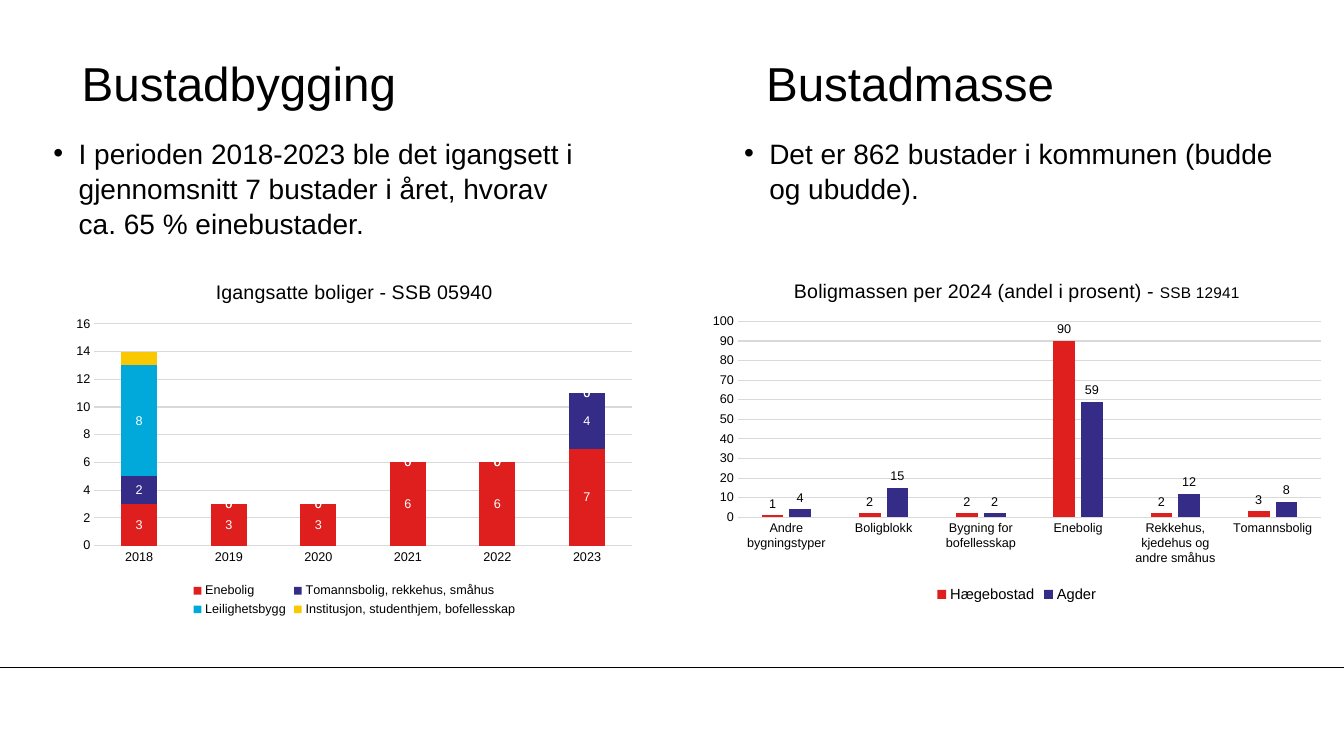
from dataclasses import dataclass

import pptx
import pptx.chart.data
import pptx.dml.color
import pptx.enum.chart
import pptx.enum.shapes
import pptx.enum.text
import pptx.oxml
import pptx.oxml.ns
import pptx.util
from lxml import etree

FONT = "Arial"
COLORS = {
    "text": "000000",
    "label": "FFFFFF",
    "grid": "D9D9D9",
    "red": "DF1F1D",
    "indigo": "342C86",
    "cyan": "00A9DA",
    "yellow": "FAC800",
}
SLIDE_WIDTH = pptx.util.Inches(13.33)
SLIDE_HEIGHT = pptx.util.Inches(7.5)
CHART_TYPES = pptx.enum.chart.XL_CHART_TYPE


@dataclass(frozen=True)
class Area:
    left: float
    top: float
    width: float
    height: float

    def emu(self) -> tuple[int, int, int, int]:
        return (
            int(SLIDE_WIDTH * self.left / 100),
            int(SLIDE_HEIGHT * self.top / 100),
            int(SLIDE_WIDTH * self.width / 100),
            int(SLIDE_HEIGHT * self.height / 100),
        )


@dataclass(frozen=True)
class Series:
    name: str
    values: tuple[int, ...]
    color: str
    labelled_points: tuple[int, ...] | None = None


@dataclass(frozen=True)
class ColumnChart:
    area: Area
    plot_share: Area
    kind: CHART_TYPES
    title_runs: tuple[tuple[str, float], ...]
    categories: tuple[str, ...]
    series: tuple[Series, ...]
    gap: int
    overlap: int
    maximum: int
    step: int
    legend_size: float
    label_color: str


@dataclass(frozen=True)
class Column:
    heading: str
    heading_area: Area
    bullet_lines: tuple[str, ...]
    bullet_area: Area
    chart: ColumnChart


COLUMNS = (
    Column(
        "Bustadbygging",
        Area(6.08, 5.87, 37.2, 10),
        ("I perioden 2018-2023 ble det igangsett i gjennomsnitt 7 bustader i året, hvorav",
         "ca. 65 % einebustader."),
        Area(3.98, 17.87, 47.64, 14.13),
        ColumnChart(
            Area(4.88, 34.8, 42.99, 47.33),
            Area(0.05, 0.17, 0.93, 0.62),
            CHART_TYPES.COLUMN_STACKED,
            (("Igangsatte boliger - SSB 05940", 14),),
            ("2018", "2019", "2020", "2021", "2022", "2023"),
            (
                Series("Enebolig", (3, 3, 3, 6, 6, 7), "red"),
                Series("Tomannsbolig, rekkehus, småhus", (2, 0, 0, 0, 0, 4), "indigo"),
                Series("Leilighetsbygg", (8, 0, 0, 0, 0, 0), "cyan"),
                Series("Institusjon, studenthjem, bofellesskap", (1, 0, 0, 0, 0, 0), "yellow", (4, 5)),
            ),
            150, 100, 16, 2, 9, "label",
        ),
    ),
    Column(
        "Bustadmasse",
        Area(57, 5.87, 37.2, 10),
        ("Det er 862 bustader i kommunen (budde og ubudde).",),
        Area(55.36, 17.87, 39.68, 11.2),
        ColumnChart(
            Area(52.06, 34.8, 47.19, 45.47),
            Area(0.06, 0.17, 0.92, 0.57),
            CHART_TYPES.COLUMN_CLUSTERED,
            (("Boligmassen per 2024 (andel i prosent) - ", 14), ("SSB 12941", 11)),
            ("Andre bygningstyper", "Boligblokk", "Bygning for bofellesskap", "Enebolig",
             "Rekkehus, kjedehus og andre småhus", "Tomannsbolig"),
            (
                Series("Hægebostad", (1, 2, 2, 90, 2, 3), "red"),
                Series("Agder", (4, 15, 2, 59, 12, 8), "indigo"),
            ),
            219, -27, 100, 10, 10.5, "text",
        ),
    ),
)


def rgb(name: str) -> pptx.dml.color.RGBColor:
    return pptx.dml.color.RGBColor.from_string(COLORS[name])


def style_font(font, size: float, color: str = "text") -> None:
    font.name = FONT
    font.size = pptx.util.Pt(size)
    font.bold = False
    font.color.rgb = rgb(color)


def prepare_frame(shape, area: Area, anchor):
    shape.left, shape.top, shape.width, shape.height = area.emu()
    frame = shape.text_frame
    frame.word_wrap = True
    frame.auto_size = pptx.enum.text.MSO_AUTO_SIZE.NONE
    frame.vertical_anchor = anchor
    frame.margin_left = frame.margin_top = frame.margin_right = frame.margin_bottom = 0
    paragraph = frame.paragraphs[0]
    paragraph.alignment = pptx.enum.text.PP_ALIGN.LEFT
    return paragraph


def add_run(paragraph, text: str, size: float) -> None:
    run = paragraph.add_run()
    run.text = text
    style_font(run.font, size)


def write_heading(shape, column: Column) -> None:
    paragraph = prepare_frame(shape, column.heading_area, pptx.enum.text.MSO_ANCHOR.MIDDLE)
    add_run(paragraph, column.heading, 34)


def add_bullet(slide, column: Column) -> None:
    shape = slide.shapes.add_textbox(*column.bullet_area.emu())
    paragraph = prepare_frame(shape, column.bullet_area, pptx.enum.text.MSO_ANCHOR.TOP)
    paragraph.line_spacing = 1.04
    properties = paragraph._p.get_or_add_pPr()
    indent = pptx.util.Inches(0.25)
    properties.set("marL", str(indent))
    properties.set("indent", str(-indent))
    etree.SubElement(properties, pptx.oxml.ns.qn("a:buFont"), typeface=FONT)
    etree.SubElement(properties, pptx.oxml.ns.qn("a:buChar"), char="•")
    for index, line in enumerate(column.bullet_lines):
        if index:
            paragraph.add_line_break()
        add_run(paragraph, line, 20)


def place_plot(chart, share: Area) -> None:
    plot_area = chart.element.find(".//" + pptx.oxml.ns.qn("c:plotArea"))
    for layout in plot_area.findall(pptx.oxml.ns.qn("c:layout")):
        plot_area.remove(layout)
    layout = etree.Element(pptx.oxml.ns.qn("c:layout"))
    manual = etree.SubElement(layout, pptx.oxml.ns.qn("c:manualLayout"))
    settings = (("layoutTarget", "inner"), ("xMode", "edge"), ("yMode", "edge"),
                ("x", share.left), ("y", share.top), ("w", share.width), ("h", share.height))
    for name, value in settings:
        etree.SubElement(manual, pptx.oxml.ns.qn(f"c:{name}"), val=str(value))
    plot_area.insert(0, layout)


def style_axes(chart, design: ColumnChart) -> None:
    for axis in (chart.category_axis, chart.value_axis):
        axis.major_tick_mark = axis.minor_tick_mark = pptx.enum.chart.XL_TICK_MARK.NONE
        style_font(axis.tick_labels.font, 9)
    values = chart.value_axis
    values.minimum_scale, values.maximum_scale = 0, design.maximum
    values.major_unit = design.step
    values.format.line.fill.background()
    for line in (chart.category_axis.format.line, values.major_gridlines.format.line):
        line.color.rgb = rgb("grid")
        line.width = pptx.util.Pt(0.75)


def style_series(plotted, series: Series, label_color: str) -> None:
    plotted.format.fill.solid()
    plotted.format.fill.fore_color.rgb = rgb(series.color)
    plotted.invert_if_negative = False
    labels = plotted.data_labels
    labels.show_value = series.labelled_points is None
    style_font(labels.font, 9, label_color)
    for index in series.labelled_points or ():
        style_font(plotted.points[index].data_label.font, 9, label_color)


def add_column_chart(slide, design: ColumnChart) -> None:
    data = pptx.chart.data.CategoryChartData()
    data.categories = design.categories
    for series in design.series:
        data.add_series(series.name, series.values)
    chart = slide.shapes.add_chart(design.kind, *design.area.emu(), data).chart
    style_font(chart.font, 10)
    chart.has_title = True
    for text, size in design.title_runs:
        add_run(chart.chart_title.text_frame.paragraphs[0], text, size)
    chart.has_legend = True
    chart.legend.position = pptx.enum.chart.XL_LEGEND_POSITION.BOTTOM
    chart.legend.include_in_layout = False
    style_font(chart.legend.font, design.legend_size)
    plot = chart.plots[0]
    plot.vary_by_categories = False
    plot.gap_width, plot.overlap = design.gap, design.overlap
    style_axes(chart, design)
    for plotted, series in zip(plot.series, design.series):
        style_series(plotted, series, design.label_color)
    place_plot(chart, design.plot_share)


def add_footer_line(slide) -> None:
    left, top, width, _ = Area(0, 88.27, 100, 0).emu()
    line = slide.shapes.add_connector(pptx.enum.shapes.MSO_CONNECTOR.STRAIGHT, left, top, width, top)
    line.line.color.rgb = rgb("text")
    line.line.width = pptx.util.Pt(0.75)
    etree.SubElement(line._element.spPr, pptx.oxml.ns.qn("a:effectLst"))


def main() -> None:
    presentation = pptx.Presentation()
    presentation.slide_width, presentation.slide_height = SLIDE_WIDTH, SLIDE_HEIGHT
    slide = presentation.slides.add_slide(presentation.slide_layouts[5])
    add_footer_line(slide)
    building, stock = COLUMNS
    write_heading(slide.shapes.title, building)
    write_heading(slide.shapes.add_textbox(*stock.heading_area.emu()), stock)
    for column in COLUMNS:
        add_bullet(slide, column)
        add_column_chart(slide, column.chart)
    presentation.save("out.pptx")


if __name__ == "__main__":
    main()
